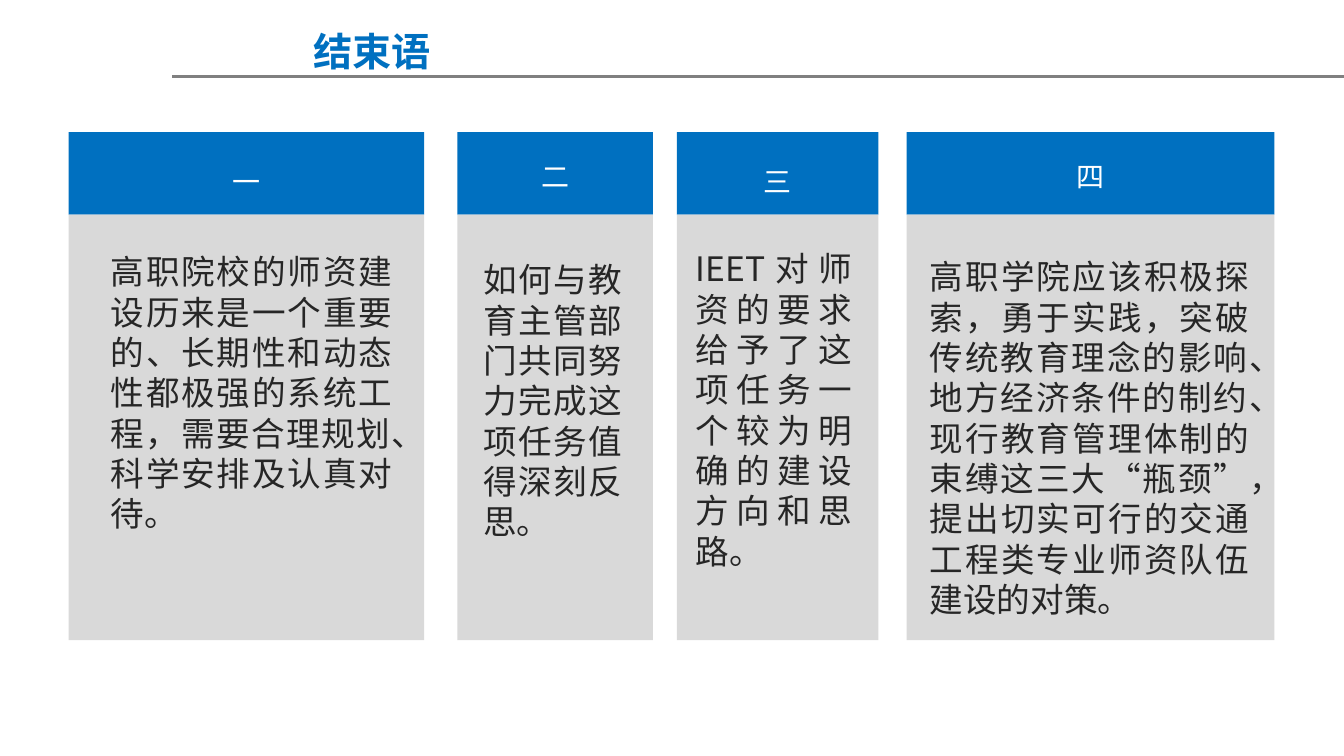
from lxml.etree import SubElement
from pptx import Presentation
from pptx.dml.color import RGBColor as RGB
from pptx.enum.shapes import MSO_CONNECTOR as CONN, MSO_SHAPE as SHAPE
from pptx.enum.text import MSO_AUTO_SIZE as FIT, PP_ALIGN as ALIGN
from pptx.oxml.ns import qn
from pptx.util import Pt

FONT = "Noto Sans CJK SC"
COLORS = {"blue": "0070C0", "panel": "D9D9D9", "rule": "808080",
          "white": "FFFFFF", "ink": "262626"}
TITLE = "结束语"
COLUMNS = [
    {"label": "一", "left": 49, "width": 254.2, "label_top": 111.6,
     "body_box": (72, 173.5, 215.3),
     "body": "高职院校的师资建设历来是一个重要的、长期性和动态性都极强的系统工程，需要合理规划、科学安排及认真对待。"},
    {"label": "二", "left": 326.9, "width": 139.7, "label_top": 108,
     "body_box": (338.4, 179.3, 113),
     "body": "如何与教育主管部门共同努力完成这项任务值得深刻反思。"},
    {"label": "三", "left": 483.8, "width": 144, "label_top": 111.6,
     "body_box": (490.3, 171.4, 126),
     "body": "IEET对师资的要求给予了这项任务一个较为明确的建设方向和思路。"},
    {"label": "四", "left": 648, "width": 262.8, "label_top": 108,
     "body_box": (657.4, 177.1, 242.6),
     "body": "高职学院应该积极探索，勇于实践，突破传统教育理念的影响、地方经济条件的制约、现行教育管理体制的束缚这三大“瓶颈”，提出切实可行的交通工程类专业师资队伍建设的对策。"},
]
HEAD_TOP, HEAD_H, PANEL_H = 94.3, 59, 303.9
LABEL_W = 131.8
LINE_RATIO = 1.2
BODY_H = {"一": 211, "二": 211, "三": 239.8, "四": 269.3}


def color(name):
    return RGB.from_string(COLORS[name])


def add_rect(s, left, top, width, height, fill):
    sp = s.shapes.add_shape(SHAPE.RECTANGLE, Pt(left), Pt(top), Pt(width), Pt(height))
    sp.shadow.inherit = False
    sp.fill.solid()
    sp.fill.fore_color.rgb = color(fill)
    sp.line.fill.background()


def add_text(s, box, text, size, ink, align, bold=False):
    sp = s.shapes.add_textbox(*map(Pt, box))
    tf = sp.text_frame
    tf.word_wrap = True
    tf.auto_size = FIT.SHAPE_TO_FIT_TEXT
    tf.margin_top, tf.margin_bottom = Pt(6), Pt(1.2)
    p = tf.paragraphs[0]
    p.alignment = align
    p.line_spacing = Pt(size * LINE_RATIO)
    r = p.add_run()
    r.text = text
    r.font.size = Pt(size)
    r.font.bold = bold
    r.font.color.rgb = color(ink)
    r.font.name = FONT
    SubElement(r.font._element, qn("a:ea")).set("typeface", FONT)


def main():
    prs = Presentation()
    prs.slide_width, prs.slide_height = Pt(960.5), Pt(540)
    s = prs.slides.add_slide(prs.slide_layouts[6])

    rule = s.shapes.add_connector(CONN.STRAIGHT, Pt(123.1), Pt(54.7), Pt(960.5), Pt(54.7))
    rule.line.color.rgb = color("rule")
    rule.line.width = Pt(2)
    SubElement(rule._element.spPr, qn("a:effectLst"))
    add_text(s, (136.1, 13.7, 259.2, 41), TITLE, 28, "blue", ALIGN.CENTER, True)

    for col in COLUMNS:
        left, width = col["left"], col["width"]
        add_rect(s, left, HEAD_TOP, width, HEAD_H, "blue")
        add_rect(s, left, HEAD_TOP + HEAD_H, width, PANEL_H, "panel")
        label_left = left + (width - LABEL_W) / 2
        add_text(s, (label_left, col["label_top"], LABEL_W, 31.7),
                 col["label"], 20, "white", ALIGN.CENTER)
        add_text(s, (*col["body_box"], BODY_H[col["label"]]),
                 col["body"], 24, "ink", ALIGN.JUSTIFY)

    prs.save("out.pptx")


if __name__ == "__main__":
    main()
